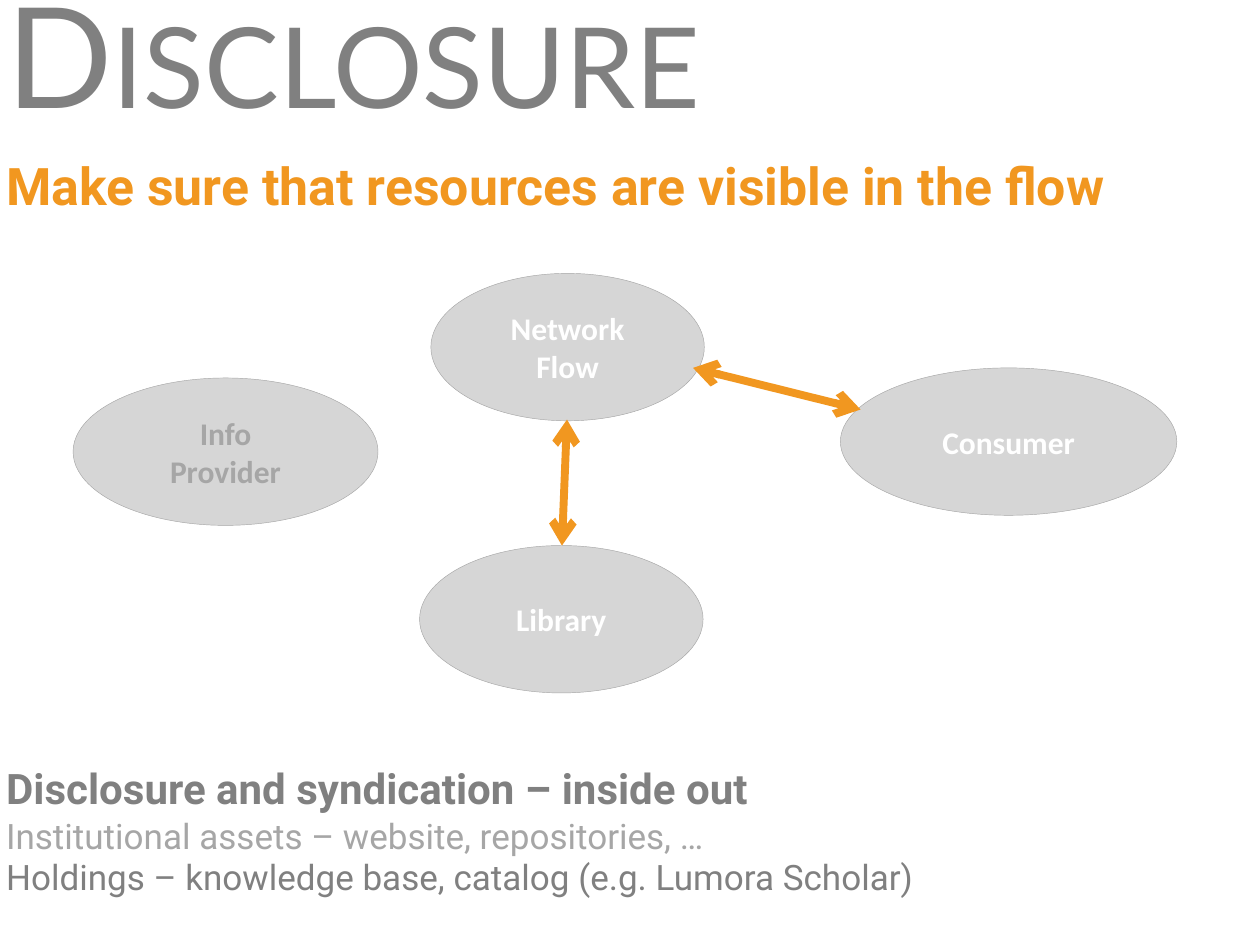
from dataclasses import dataclass

from lxml.etree import SubElement
from pptx import Presentation
from pptx.dml.color import RGBColor
from pptx.enum.shapes import MSO_CONNECTOR, MSO_SHAPE
from pptx.enum.text import MSO_ANCHOR as Anchor, PP_ALIGN as Align
from pptx.oxml.ns import qn
from pptx.util import Inches, Pt


@dataclass(frozen=True)
class Theme:
    grey: str = "808080"
    light_grey: str = "A6A6A6"
    orange: str = "F19720"
    white: str = "FFFFFF"
    title_font: str = "Lato"
    body_font: str = "Roboto"
    node_font: str = "Calibri"
    title_size: float = 80
    subtitle_size: float = 29.6
    heading_size: float = 24
    detail_size: float = 20
    node_size: float = 18
    outline_width: float = 0.25
    arrow_width: float = 4.5
    node_alpha: int = 46  # percent


THEME = Theme()
TEXT_LEFT, TEXT_WIDTH = -0.05, 10.05
NODE_HEIGHT = 1.17

# Content: text, top, height, anchor, font, size, colour, bold
TITLE = ("Disclosure", -0.3, 1.4, Anchor.TOP,
         THEME.title_font, THEME.title_size, THEME.grey, False)
LINES = [
    ("Make sure that resources are visible in the flow", 1.17, 0.7, Anchor.TOP,
     THEME.body_font, THEME.subtitle_size, THEME.orange, True),
    ("Disclosure and syndication – inside out", 6, 0.5, Anchor.MIDDLE,
     THEME.body_font, THEME.heading_size, THEME.grey, True),
    ("Institutional assets – website, repositories, …", 6.42, 0.42, Anchor.MIDDLE,
     THEME.body_font, THEME.detail_size, THEME.light_grey, False),
    ("Holdings – knowledge base, catalog (e.g. Lumora Scholar)", 6.75, 0.42, Anchor.MIDDLE,
     THEME.body_font, THEME.detail_size, THEME.grey, False),
]
# Label, left, top, width, text colour
NODES = [
    ("Library", 3.33, 4.33, 2.25, THEME.white),
    ("Consumer", 6.67, 2.92, 2.67, THEME.white),
    ("Info\vProvider", 0.58, 3, 2.42, THEME.light_grey),
    ("Network Flow", 3.42, 2.17, 2.17, THEME.white),
]
# Start and end points
FLOWS = [
    ((4.5, 3.33), (4.46, 4.33)),
    ((5.5, 2.92), (6.83, 3.25)),
]


def rgb(colour):
    return RGBColor.from_string(colour)


def write(frame, text, anchor, font_name, size, colour, bold):
    frame.word_wrap = True
    frame.vertical_anchor = anchor
    paragraph = frame.paragraphs[0]
    paragraph.text = text
    font = paragraph.font
    font.name, font.size, font.bold = font_name, Pt(size), bold
    font.color.rgb = rgb(colour)
    return paragraph


def add_line(slide, text, top, height, *style):
    box = slide.shapes.add_textbox(Inches(TEXT_LEFT), Inches(top),
                                   Inches(TEXT_WIDTH), Inches(height))
    return write(box.text_frame, text, *style)


def add_node(slide, label, left, top, width, colour):
    node = slide.shapes.add_shape(MSO_SHAPE.OVAL, Inches(left), Inches(top),
                                  Inches(width), Inches(NODE_HEIGHT))
    node.shadow.inherit = False
    node.fill.solid()
    node.fill.fore_color.rgb = rgb(THEME.light_grey)
    fill_colour = node.fill._xPr.find(qn("a:solidFill"))[0]
    SubElement(fill_colour, qn("a:alpha"), val=str(THEME.node_alpha * 1000))
    node.line.color.rgb = rgb(THEME.light_grey)
    node.line.width = Pt(THEME.outline_width)
    paragraph = write(node.text_frame, label, Anchor.MIDDLE,
                      THEME.node_font, THEME.node_size, colour, True)
    paragraph.alignment = Align.CENTER


def add_flow(slide, start, end):
    points = [Inches(value) for value in (*start, *end)]
    flow = slide.shapes.add_connector(MSO_CONNECTOR.STRAIGHT, *points)
    flow.line.color.rgb = rgb(THEME.orange)
    flow.line.width = Pt(THEME.arrow_width)
    outline = flow.line._get_or_add_ln()
    for arrowhead in ("a:headEnd", "a:tailEnd"):
        SubElement(outline, qn(arrowhead), type="arrow")
    SubElement(flow._element.spPr, qn("a:effectLst"))


def main():
    deck = Presentation()
    deck.slide_width, deck.slide_height = Inches(10), Inches(7.5)
    slide = deck.slides.add_slide(deck.slide_layouts[6])

    # Title in small capitals
    title = add_line(slide, *TITLE)
    title.runs[0].font._element.set("cap", "small")

    # Subtitle and closing lines
    for line in LINES:
        add_line(slide, *line)

    # Diagram
    for node in NODES:
        add_node(slide, *node)
    for flow in FLOWS:
        add_flow(slide, *flow)

    deck.save("out.pptx")


if __name__ == "__main__":
    main()
